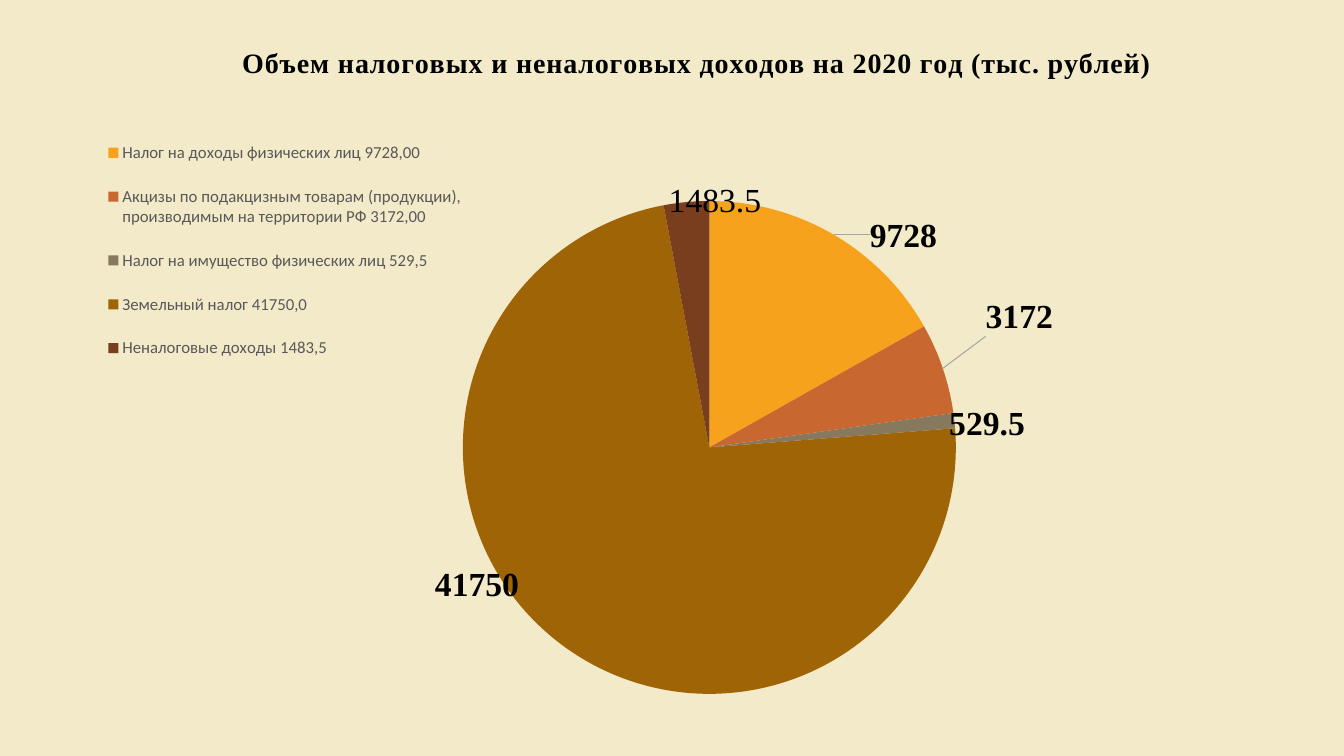
from dataclasses import dataclass
from math import cos, pi, sin

from lxml import etree
from pptx import Presentation
from pptx.chart.data import CategoryChartData
from pptx.dml.color import RGBColor
from pptx.enum.chart import XL_CHART_TYPE, XL_LABEL_POSITION, XL_LEGEND_POSITION
from pptx.oxml import parse_xml
from pptx.oxml.ns import qn
from pptx.util import Inches, Pt

PIE = XL_CHART_TYPE.PIE
CENTER = XL_LABEL_POSITION.CENTER
RIGHT = XL_LEGEND_POSITION.RIGHT
CHART_NS = 'xmlns:c="http://schemas.openxmlformats.org/drawingml/2006/chart"'
DRAWING_NS = 'xmlns:a="http://schemas.openxmlformats.org/drawingml/2006/main"'


@dataclass(frozen=True)
class Theme:
    background: str = "F2EAC8"
    ink: str = "000000"
    legend_ink: str = "595959"
    leader: str = "A6A6A6"
    heading_font: str = "Times New Roman"
    body_font: str = "Calibri"
    title_size: int = 20
    title_spacing: int = 50
    label_size: int = 24
    legend_size: int = 12
    base_size: int = 10


THEME = Theme()
TITLE = "Объем налоговых и неналоговых доходов на 2020 год (тыс. рублей)"

# Category, share in percent, colour, label, bold, label centre in inches from the chart corner
REVENUES = [
    ("Налог на доходы физических лиц 9728,00", 17, "F6A21D", "9728", True, (7.97, 2.11)),
    ("Акцизы по подакцизным товарам (продукции), производимым на территории РФ 3172,00",
     6, "C96731", "3172", True, (9.12, 2.92)),
    ("Налог на имущество физических лиц 529,5", 1, "87795D", "529.5", True, (8.8, 3.98)),
    ("Земельный налог 41750,0", 74, "9F6406", "41750", True, (3.74, 5.57)),
    ("Неналоговые доходы 1483,5", 3, "793E1D", "1483.5", False, (6.1, 1.76)),
]

CHART_BOX = (0.99, 0.23, 11.84, 7.17)
# Inches from the chart corner: left, top, width, height
PLOT_AREA = (3.6, 1.25, 4.89, 5.92)
LEGEND_AREA = (0, 0.95, 3.67, 2.61)
TITLE_CORNER = (1.36, 0.17)


def style_font(font, name, size, color, bold):
    font.name = name
    font.size = Pt(size)
    font.bold = bold
    font.color.rgb = RGBColor.from_string(color)


def make_layout(lengths, size, edge=False, inner=False):
    """Turn lengths in inches into fractions of the chart size."""
    layout = parse_xml(f"<c:layout {CHART_NS}><c:manualLayout/></c:layout>")
    settings = [("layoutTarget", "inner")] if inner else []
    if edge:
        settings += [("xMode", "edge"), ("yMode", "edge")]
    settings += [(tag, round(length / whole, 4))
                 for tag, length, whole in zip("xywh", lengths, size * 2)]
    for tag, value in settings:
        etree.SubElement(layout[0], qn(f"c:{tag}")).set("val", str(value))
    return layout


def set_layout(parent, layout, after=None):
    """Put the layout right after the given child, or first."""
    for old in parent.findall(qn("c:layout")):
        parent.remove(old)
    if after is None:
        parent.insert(0, layout)
    else:
        parent.find(qn(after)).addnext(layout)


def add_title(chart, size):
    chart.has_title = True
    title = chart.chart_title
    run = title.text_frame.paragraphs[0].add_run()
    run.text = TITLE
    style_font(run.font, THEME.heading_font, THEME.title_size, THEME.ink, True)
    run.font._element.set("spc", str(THEME.title_spacing))
    set_layout(title._element, make_layout(TITLE_CORNER, size, edge=True), "c:tx")


def add_legend(chart, size):
    chart.has_legend = True
    legend = chart.legend
    legend.position = RIGHT
    legend.include_in_layout = False
    style_font(legend.font, THEME.body_font, THEME.legend_size, THEME.legend_ink, False)
    set_layout(legend._element, make_layout(LEGEND_AREA, size, edge=True), "c:legendPos")


def add_slice_labels(series, size):
    left, top, plot_width, plot_height = PLOT_AREA
    pie_x = left + plot_width / 2
    pie_y = top + plot_height / 2
    radius = min(plot_width, plot_height) / 2
    total = sum(revenue[1] for revenue in REVENUES)
    passed = 0
    for index, (_, share, color, amount, bold, (label_x, label_y)) in enumerate(REVENUES):
        point = series.points[index]
        point.format.fill.solid()
        point.format.fill.fore_color.rgb = RGBColor.from_string(color)

        label = point.data_label
        run = label.text_frame.paragraphs[0].add_run()
        run.text = amount
        style_font(run.font, THEME.heading_font, THEME.label_size, THEME.ink, bold)
        label.position = CENTER

        # The offset runs from the middle of the slice to the label centre
        angle = 2 * pi * (passed + share / 2) / total
        passed += share
        offset = (label_x - pie_x - radius / 2 * sin(angle),
                  label_y - pie_y + radius / 2 * cos(angle))
        element = series._element.find(qn("c:dLbls")).findall(qn("c:dLbl"))[index]
        set_layout(element, make_layout(offset, size), "c:idx")

    # Leader lines
    labels = series.data_labels
    labels.show_percentage = True
    labels.show_value = False
    labels.position = CENTER
    group = labels._element
    for tag in ("c:showLeaderLines", "c:leaderLines"):
        for old in group.findall(qn(tag)):
            group.remove(old)
    etree.SubElement(group, qn("c:showLeaderLines")).set("val", "1")
    group.append(parse_xml(
        f'<c:leaderLines {CHART_NS} {DRAWING_NS}><c:spPr><a:ln w="9525"><a:solidFill>'
        f'<a:srgbClr val="{THEME.leader}"/></a:solidFill></a:ln></c:spPr></c:leaderLines>'))


def add_revenue_chart(slide, box):
    size = box[2:]
    data = CategoryChartData()
    data.categories = [revenue[0] for revenue in REVENUES]
    data.add_series("Series 1", [revenue[1] for revenue in REVENUES])
    chart = slide.shapes.add_chart(PIE, *map(Inches, box), data).chart
    style_font(chart.font, THEME.body_font, THEME.base_size, THEME.ink, False)
    chart.plots[0].vary_by_categories = True

    add_title(chart, size)
    add_legend(chart, size)
    add_slice_labels(chart.plots[0].series[0], size)
    plot_area = chart._chartSpace.chart.plotArea
    set_layout(plot_area, make_layout(PLOT_AREA, size, edge=True, inner=True))


def main():
    deck = Presentation()
    deck.slide_width = Inches(13.33)
    deck.slide_height = Inches(7.5)
    slide = deck.slides.add_slide(deck.slide_layouts[6])
    slide.background.fill.solid()
    slide.background.fill.fore_color.rgb = RGBColor.from_string(THEME.background)
    add_revenue_chart(slide, CHART_BOX)
    deck.save("out.pptx")


if __name__ == "__main__":
    main()
